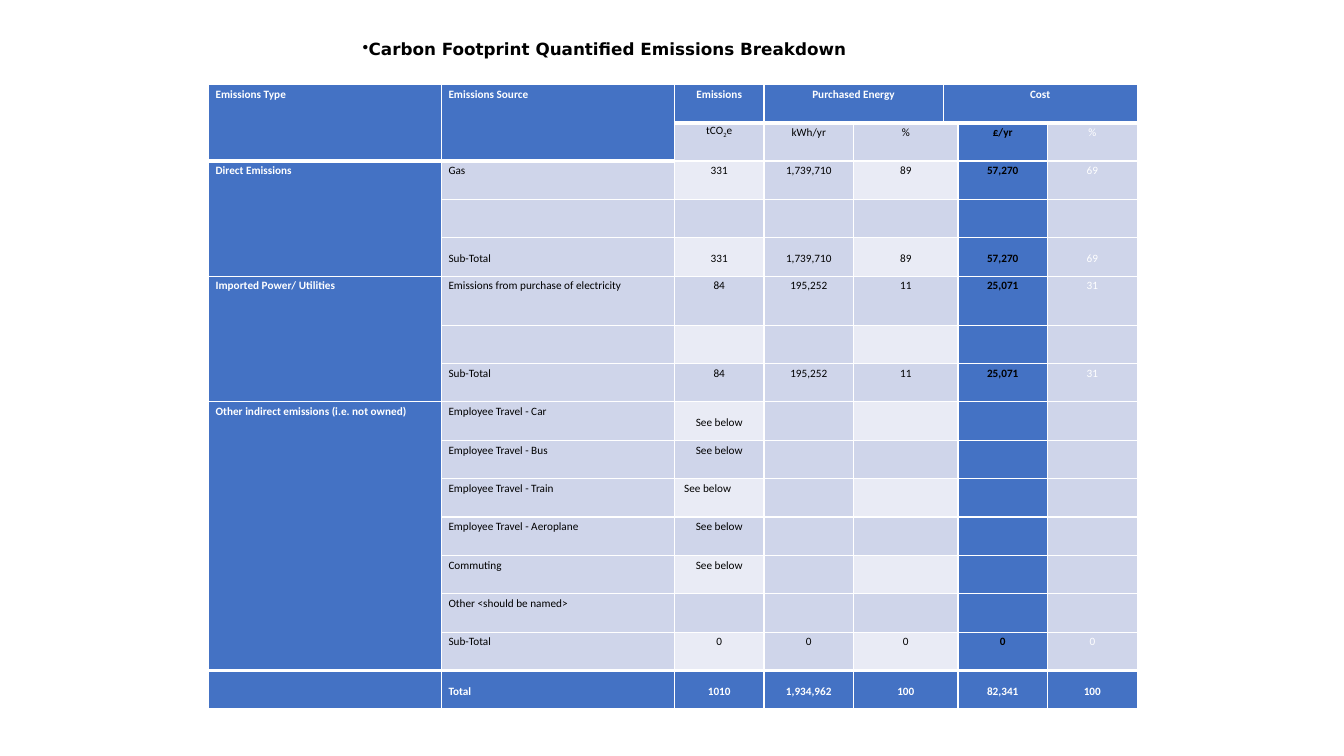
from dataclasses import dataclass

from lxml import etree
from pptx import Presentation
from pptx.dml.color import RGBColor
from pptx.enum.text import MSO_ANCHOR, MSO_AUTO_SIZE, PP_ALIGN
from pptx.oxml.ns import qn
from pptx.util import Pt

LEFT, CENTER = PP_ALIGN.LEFT, PP_ALIGN.CENTER
TOP, MIDDLE = MSO_ANCHOR.TOP, MSO_ANCHOR.MIDDLE
GROW = MSO_AUTO_SIZE.SHAPE_TO_FIT_TEXT


@dataclass(frozen=True)
class Theme:
    blue: str = "4472C4"
    band: str = "CFD5EA"
    pale: str = "E9EBF5"
    white: str = "FFFFFF"
    black: str = "000000"
    title_font: str = "DejaVu Sans"
    body_font: str = "Calibri"
    title_size: float = 12
    body_size: float = 8
    leading: float = 12
    inset: float = 5
    thin: float = 1
    thick: float = 3


T = Theme()
COLS = [166.4, 166.4, 64, 64, 64, 10.6, 64, 64]
ROW_H, TALL_H, TALL_ROW = 27.43, 35, 5
ROWS = [
    ["Emissions Type", "Emissions Source", "Emissions", "Purchased Energy", "", "Cost", "", ""],
    ["", "", "tCO2e", "kWh/yr", "%", "", "£/yr", "%"],
    ["Direct Emissions", "Gas", "331", "1,739,710", "89", "", "57,270", "69"],
    [""] * 8,
    ["", "Sub-Total", "331", "1,739,710", "89", "", "57,270", "69"],
    ["Imported Power/ Utilities", "Emissions from purchase of electricity",
     "84", "195,252", "11", "", "25,071", "31"],
    [""] * 8,
    ["", "Sub-Total", "84", "195,252", "11", "", "25,071", "31"],
    ["Other indirect emissions (i.e. not owned)", "Employee Travel - Car",
     "See below", "", "", "", "", ""],
    ["", "Employee Travel - Bus", "See below", "", "", "", "", ""],
    ["", "Employee Travel - Train", "See below", "", "", "", "", ""],
    ["", "Employee Travel - Aeroplane", "See below", "", "", "", "", ""],
    ["", "Commuting", "See below", "", "", "", "", ""],
    ["", "Other <should be named>", "", "", "", "", "", ""],
    ["", "Sub-Total", "0", "0", "0", "", "0", "0"],
    ["", "Total", "1010", "1,934,962", "100", "", "82,341", "100"],
]
LAST = len(ROWS) - 1
MERGES = [(0, 0, 1, 0), (0, 1, 1, 1), (0, 3, 0, 4), (0, 5, 0, 7),
          (2, 0, 4, 0), (5, 0, 7, 0), (8, 0, 14, 0)]
MERGES += [(row, 4, row, 5) for row in range(1, len(ROWS))]
COST, SHARE = 6, 7
SUBSCRIPTS = {"tCO2e": ("tCO", "2", "e")}
MIDDLE_CELLS = {(8, 2)} | {(row, col) for row in (4, LAST) for col in range(len(COLS))}
TRAIN_NOTE = (10, 2)


def write(p, text, *, font=T.body_font, size=T.body_size, color=T.black,
          bold=False, align=LEFT, leading=None):
    p.alignment = align
    if leading:
        p.line_spacing = Pt(leading)
    for i, part in enumerate(SUBSCRIPTS.get(text, (text,))):
        r = p.add_run()
        r.text = part
        r.font.name = font
        r.font.size = Pt(size)
        r.font.bold = bold
        r.font.color.rgb = RGBColor.from_string(color)
        if i == 1:
            r._r.get_or_add_rPr().set("baseline", "-25000")


def set_borders(cell, row, col):
    top = T.thick if row == LAST or (row == 1 and col > 1) else T.thin
    bottom = T.thick if row == 0 or (row == 1 and col < 2) or row == LAST - 1 else T.thin
    tc_pr = cell._tc.get_or_add_tcPr()
    for tag, width in (("lnL", T.thin), ("lnR", T.thin), ("lnT", top), ("lnB", bottom)):
        ln = etree.SubElement(tc_pr, qn(f"a:{tag}"), w=str(Pt(width)))
        fill = etree.SubElement(ln, qn("a:solidFill"))
        etree.SubElement(fill, qn("a:srgbClr"), val=T.white)


def cell_style(row, col):
    if row in (0, LAST) or col == 0 or (row == 1 and col == 1):
        return T.blue, T.white, True
    if col == COST:
        return T.blue, T.black, True
    if col == SHARE:
        return T.band, T.white, False
    pale = row % 2 == 0 and col in (2, 4, 5)
    return (T.pale if pale else T.band), T.black, False


def add_title(slide, left, top, width, height):
    sp = slide.shapes.add_textbox(Pt(left), Pt(top), Pt(width), Pt(height))
    tf = sp.text_frame
    tf.word_wrap = True
    tf.auto_size = GROW
    p = tf.paragraphs[0]
    etree.SubElement(p._p.get_or_add_pPr(), qn("a:buChar"), char="•")
    write(p, "Carbon Footprint Quantified Emissions Breakdown",
          font=T.title_font, size=T.title_size, bold=True)


def add_emissions_table(slide, left, top, width, height):
    frame = slide.shapes.add_table(len(ROWS), len(COLS), Pt(left), Pt(top), Pt(width), Pt(height))
    table = frame.table
    table.first_row = table.horz_banding = False
    for col, col_w in enumerate(COLS):
        table.columns[col].width = Pt(col_w)
    for row, texts in enumerate(ROWS):
        table.rows[row].height = Pt(TALL_H if row == TALL_ROW else ROW_H)
        for col, text in enumerate(texts):
            cell = table.cell(row, col)
            fill, color, bold = cell_style(row, col)
            set_borders(cell, row, col)
            cell.fill.solid()
            cell.fill.fore_color.rgb = RGBColor.from_string(fill)
            indent = 2 if (row, col) == TRAIN_NOTE else 0
            cell.margin_left, cell.margin_right = Pt(T.inset + indent), Pt(T.inset)
            cell.margin_top = cell.margin_bottom = 0
            cell.vertical_anchor = MIDDLE if (row, col) in MIDDLE_CELLS else TOP
            if text:
                align = LEFT if col < 2 or indent else CENTER
                write(cell.text_frame.paragraphs[0], text, color=color, bold=bold,
                      align=align, leading=T.leading)
    for r1, c1, r2, c2 in MERGES:
        table.cell(r1, c1).merge(table.cell(r2, c2))


def main():
    prs = Presentation()
    prs.slide_width, prs.slide_height = Pt(960), Pt(540)
    slide = prs.slides.add_slide(prs.slide_layouts[6])
    add_emissions_table(slide, 149, 60.2, sum(COLS), ROW_H * LAST + TALL_H)
    add_title(slide, 252, 24.5, 480, 21.6)
    prs.save("out.pptx")


if __name__ == "__main__":
    main()
